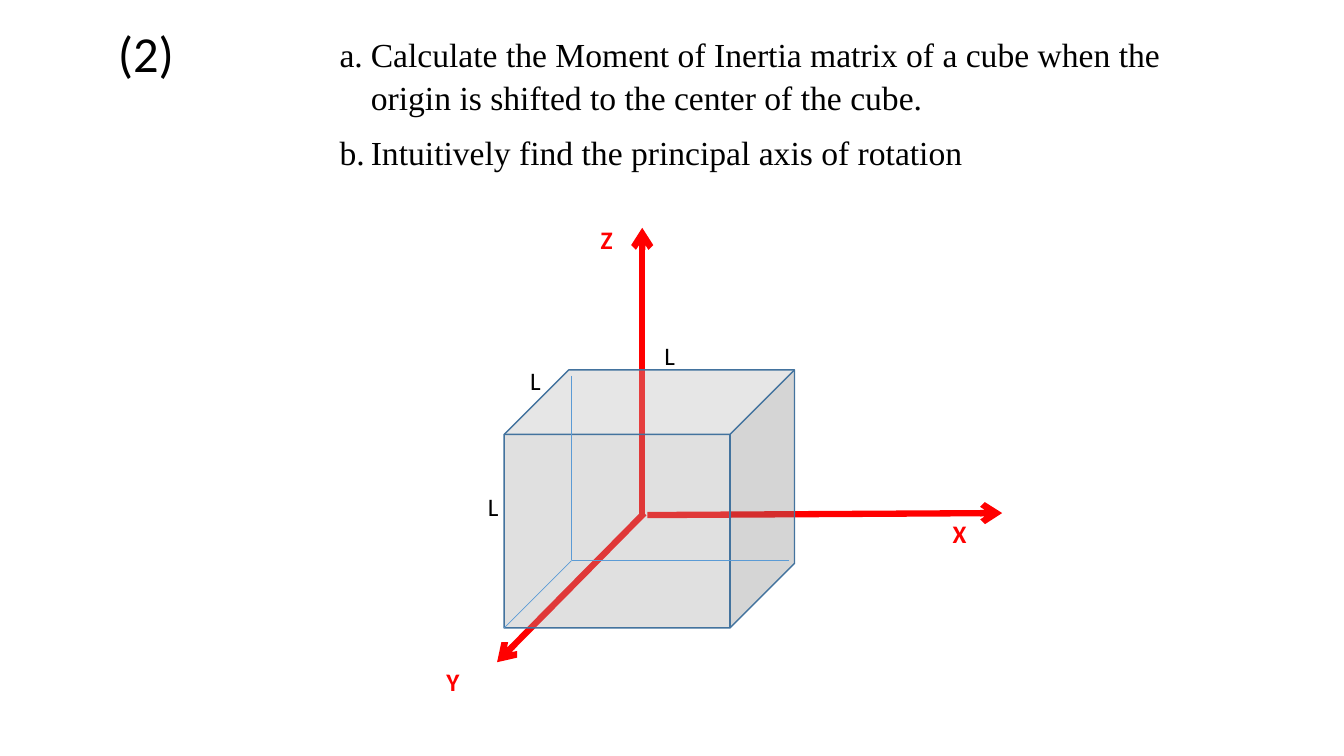
import dataclasses

import lxml.etree
import pptx
import pptx.dml.color
import pptx.enum.shapes
import pptx.enum.text
import pptx.oxml.ns
import pptx.util

Inches = pptx.util.Inches
Pt = pptx.util.Pt
qn = pptx.oxml.ns.qn


def rgb(value):
    return pptx.dml.color.RGBColor.from_string(value)


@dataclasses.dataclass(frozen=True)
class Theme:
    black = rgb("000000")
    axis = rgb("FF0000")
    cube_fill = rgb("A6A6A6")
    cube_edge = rgb("43739E")
    hidden_edge = rgb("5B9BD5")
    sans = "Calibri"
    serif = "Times New Roman"
    label_size = Pt(18)
    question_size = Pt(24)
    number_size = Pt(36)


THEME = Theme()


def set_format(target, values):
    for name, value in values.items():
        setattr(target, name, value)


def add_child(parent, tag, **attributes):
    return lxml.etree.SubElement(parent, qn(tag), attributes)


def add_run(paragraph, text, size, font_name, color, bold=False):
    run = paragraph.add_run()
    run.text = text
    set_format(run.font, {"size": size, "name": font_name, "bold": bold})
    run.font.color.rgb = color


def add_text_box(slide, left, top, width, height, wrap=False):
    box = slide.shapes.add_textbox(*map(Inches, (left, top, width, height)))
    set_format(box.text_frame, {
        "word_wrap": wrap,
        "auto_size": pptx.enum.text.MSO_AUTO_SIZE.SHAPE_TO_FIT_TEXT,
    })
    return box.text_frame


def add_axis_label(slide, text, left, top):
    frame = add_text_box(slide, left, top, 0.65, 0.4, wrap=True)
    add_run(frame.paragraphs[0], text, THEME.label_size, THEME.sans, THEME.axis, bold=True)


def add_length_label(slide, left, top):
    frame = add_text_box(slide, left, top, 0.31, 0.4)
    add_run(frame.paragraphs[0], "L", THEME.label_size, THEME.sans, THEME.black)


def add_line(slide, start, end, color, width, arrow=False):
    line = slide.shapes.add_connector(
        pptx.enum.shapes.MSO_CONNECTOR.STRAIGHT, *map(Inches, (*start, *end)))
    line.line.color.rgb = color
    line.line.width = Pt(width)
    if arrow:
        add_child(line.line._get_or_add_ln(), "a:tailEnd", type="arrow")
    add_child(line._element.spPr, "a:effectLst")


def add_cube(slide, left, top, width, height):
    cube = slide.shapes.add_shape(
        pptx.enum.shapes.MSO_SHAPE.CUBE, *map(Inches, (left, top, width, height)))
    cube.shadow.inherit = False
    cube.fill.solid()
    cube.fill.fore_color.rgb = THEME.cube_fill
    fill_color = cube._element.spPr.find(qn("a:solidFill")).find(qn("a:srgbClr"))
    add_child(fill_color, "a:alpha", val="34000")
    cube.line.color.rgb = THEME.cube_edge
    cube.line.width = Pt(1)


def add_questions(slide, questions):
    frame = add_text_box(slide, 2.77, 0.26, 9.64, 1.51, wrap=True)
    for index, question in enumerate(questions):
        paragraph = frame.add_paragraph() if index else frame.paragraphs[0]
        set_format(paragraph, {"level": 1, "line_spacing": 1.07, "space_after": Pt(8)})
        properties = paragraph._p.get_or_add_pPr()
        properties.set("marL", str(Inches(0.81)))
        properties.set("indent", str(Inches(-0.31)))
        add_child(properties, "a:buFont", typeface=THEME.serif)
        add_child(properties, "a:buAutoNum", type="alphaLcPeriod")
        add_run(paragraph, question, THEME.question_size, THEME.serif, THEME.black)


def main():
    presentation = pptx.Presentation()
    set_format(presentation, {"slide_width": Inches(13.33), "slide_height": Inches(7.5)})
    slide = presentation.slides.add_slide(presentation.slide_layouts[6])

    # Axes, seen through the cube
    axes = [
        ("X", (9.35, 5.09), (6.42, 5.11), (9.94, 5.09)),
        ("Y", (4.33, 6.56), (6.39, 5.09), (4.93, 6.57)),
        ("Z", (5.86, 2.18), (6.37, 5.11), (6.37, 2.26)),
    ]
    for name, label_position, start, end in axes:
        add_axis_label(slide, name, *label_position)
        add_line(slide, start, end, THEME.axis, 4.5, arrow=True)

    # Cube with its side lengths
    add_cube(slide, 5, 3.67, 2.88, 2.56)
    for position in [(6.49, 3.33), (4.74, 4.83), (5.16, 3.58)]:
        add_length_label(slide, *position)

    # Hidden edges meet at the back corner
    back_corner = (5.67, 5.56)
    add_line(slide, (5.67, 3.73), back_corner, THEME.hidden_edge, 0.5)
    for end in [(7.83, 5.56), (5, 6.23)]:
        add_line(slide, back_corner, end, THEME.hidden_edge, 0.5)

    # Problem number and questions
    add_questions(slide, [
        "Calculate the Moment of Inertia matrix of a cube when the "
        "origin is shifted to the center of the cube.",
        "Intuitively find the principal axis of rotation",
    ])
    number = add_text_box(slide, 1.07, 0.17, 0.76, 0.71)
    add_run(number.paragraphs[0], "(2)", THEME.number_size, THEME.sans, THEME.black)

    presentation.save("out.pptx")


if __name__ == "__main__":
    main()
